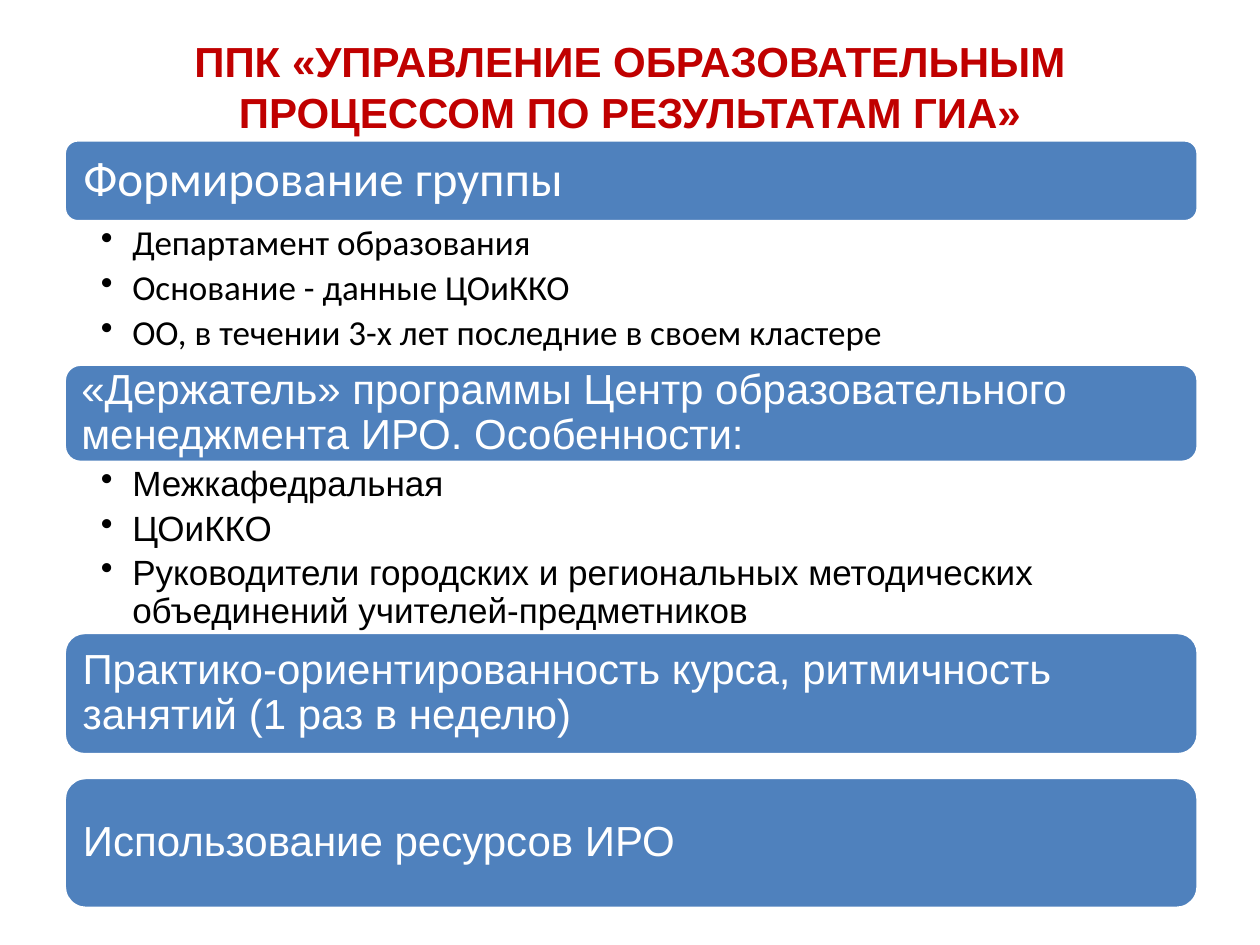
from lxml.etree import SubElement
from pptx import Presentation
from pptx.dml.color import RGBColor
from pptx.enum.shapes import MSO_SHAPE as Shape
from pptx.enum.text import MSO_ANCHOR as Anchor, PP_ALIGN as Align
from pptx.oxml.ns import qn
from pptx.util import Inches, Pt

BLUE, WHITE, RED, BLACK = "4F81BD", "FFFFFF", "C00000", "000000"
LEFT, WIDTH = 0.51, 9

# Top, height, heading, heading font, size, inset, bullets height, bullets
SECTIONS = [
    (1.11, 0.65, "Формирование группы", "Calibri", 28, 0.12, 1.13,
     ["Департамент образования", "Основание - данные ЦОиККО",
      "ОО, в течении 3-х лет последние в своем кластере"]),
    (2.89, 0.78, "«Держатель» программы Центр образовательного менеджмента ИРО. "
     "Особенности:", "Arial", 24, 0.1, 1.36,
     ["Межкафедральная", "ЦОиККО",
      "Руководители городских и региональных методических объединений "
      "учителей-предметников"]),
    (5.02, 0.97, "Практико-ориентированность курса, ритмичность занятий "
     "(1 раз в неделю)", "Arial", 24, 0.1, 0, []),
    (6.17, 1.04, "Использование ресурсов ИРО", "Arial", 24, 0.1, 0, []),
]


def rgb(value):
    return RGBColor.from_string(value)


def add_bullet(paragraph):
    paragraph.level = 1
    props = paragraph._p.get_or_add_pPr()
    props.set("marL", str(Inches(0.25)))
    props.set("indent", str(-Inches(0.25)))
    SubElement(props, qn("a:buChar"), char="•")


def write(holder, lines, *, font, size, color, bold=False, align=Align.LEFT,
          anchor=Anchor.MIDDLE, insets=(0.1, 0.05, 0.1, 0.05),
          spacing=0.9, after=0, bullets=False):
    frame = holder.text_frame
    frame.word_wrap = True
    frame.vertical_anchor = anchor
    (frame.margin_left, frame.margin_top,
     frame.margin_right, frame.margin_bottom) = map(Inches, insets)
    for index, line in enumerate(lines):
        paragraph = frame.paragraphs[0] if index == 0 else frame.add_paragraph()
        paragraph.alignment = align
        paragraph.line_spacing = spacing
        paragraph.space_after = Pt(after)
        if bullets:
            add_bullet(paragraph)
        run = paragraph.add_run()
        run.text = line
        run.font.name, run.font.size, run.font.bold = font, Pt(size), bold
        run.font.color.rgb = rgb(color)


def add_title(slide, box):
    title = slide.shapes.add_textbox(*map(Inches, box))
    write(title, ["ППК «УПРАВЛЕНИЕ ОБРАЗОВАТЕЛЬНЫМ ПРОЦЕССОМ ПО РЕЗУЛЬТАТАМ ГИА»"],
          font="Arial", size=24, color=RED, bold=True, align=Align.CENTER, spacing=1.0)


def add_heading(slide, box, heading, font, size, inset):
    bar = slide.shapes.add_shape(Shape.ROUNDED_RECTANGLE, *map(Inches, box))
    bar.shadow.inherit = False
    bar.fill.solid()
    bar.fill.fore_color.rgb = rgb(BLUE)
    bar.line.color.rgb = rgb(WHITE)
    bar.line.width = Pt(2)
    write(bar, [heading], font=font, size=size, color=WHITE, insets=(inset,) * 4)


def add_details(slide, box, details, font):
    listing = slide.shapes.add_textbox(*map(Inches, box))
    write(listing, details, font=font, size=20, color=BLACK, anchor=Anchor.TOP,
          insets=(0.29, 0.03, 0.16, 0.03), after=4, bullets=True)


def main():
    deck = Presentation()
    deck.slide_width, deck.slide_height = Inches(10), Inches(7.5)
    slide = deck.slides.add_slide(deck.slide_layouts[6])

    add_title(slide, (0.5, 0.3, 9, 0.77))

    # Heading bars, each followed directly by its bullets
    for top, height, heading, font, size, inset, details_height, details in SECTIONS:
        add_heading(slide, (LEFT, top, WIDTH, height), heading, font, size, inset)
        if details:
            add_details(slide, (LEFT, top + height, WIDTH, details_height), details, font)

    deck.save("out.pptx")


if __name__ == "__main__":
    main()
